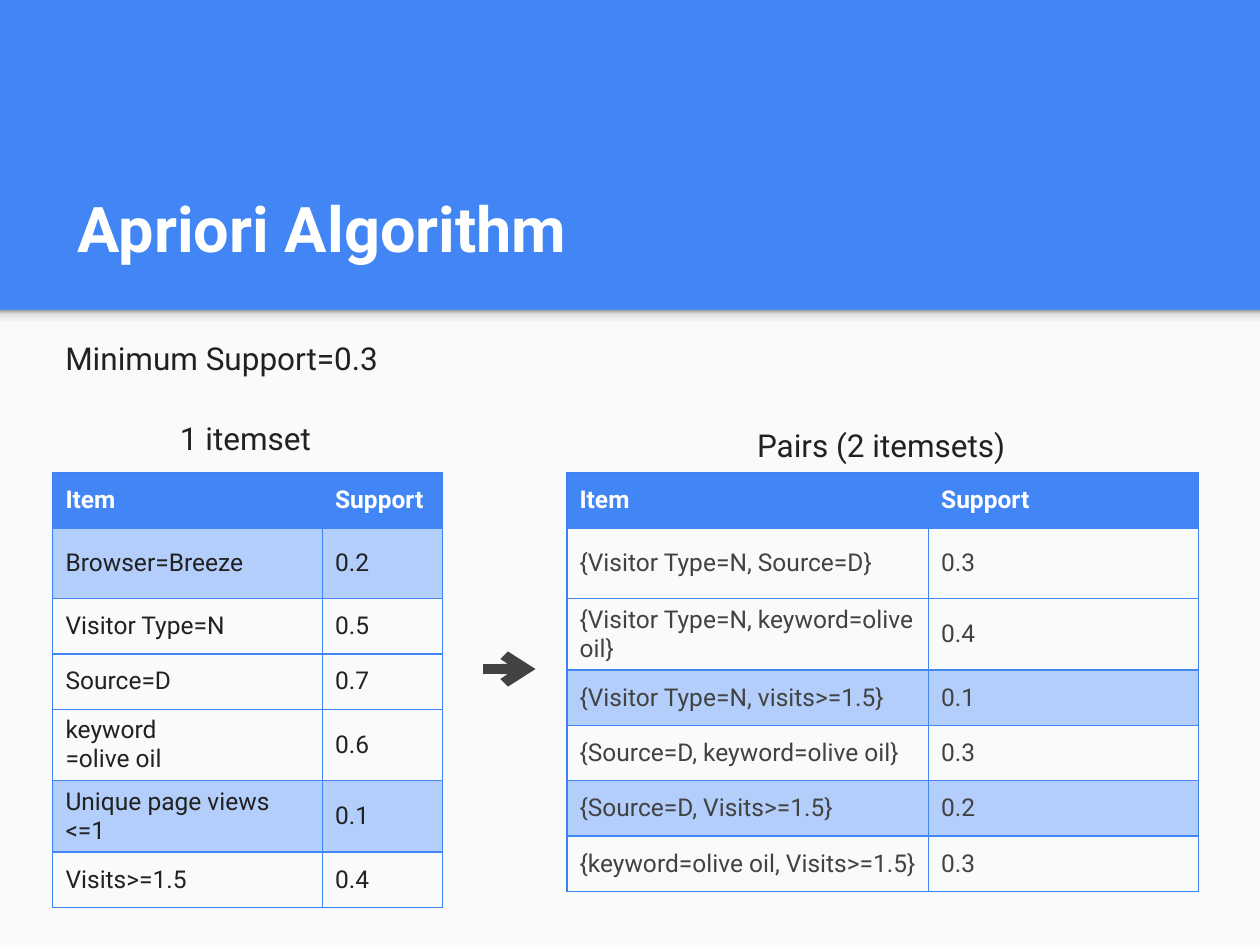
"""Build the Apriori Algorithm slide with its single-item and pair support tables."""
from lxml.etree import SubElement
from pptx import Presentation
from pptx.dml.color import RGBColor
from pptx.enum.shapes import MSO_CONNECTOR, MSO_SHAPE
from pptx.enum.text import MSO_ANCHOR
from pptx.oxml.ns import qn
from pptx.util import Inches, Pt

COLORS = {
    "blue": "4285F4", "edge": "3C81F3", "rare": "B3CEFB", "paper": "FAFAFA",
    "white": "FFFFFF", "ink": "212121", "gray": "424242",
}
SHADE = [(0, "F9F9F9"), (36, "F9F9F9"), (80, "DEDEDE"), (100, "999999")]
MIN_SUPPORT = 0.3
ROW_HEIGHTS = [4.4, 5.6, 4.4, 4.4, 4.4, 4.4, 4.4]

deck = Presentation()
deck.slide_width, deck.slide_height = Inches(10), Inches(7.5)
UNIT = deck.slide_width / 100


def grid(*cells):
    return [round(cell * UNIT) for cell in cells]


def write(frame, text, size, color, bold=False):
    frame.text = text
    look = {"name": "Roboto", "size": Pt(size), "bold": bold}
    for paragraph in frame.paragraphs:
        font = paragraph.runs[0].font
        for key, value in look.items():
            setattr(font, key, value)
        font.color.rgb = RGBColor.from_string(COLORS[color])


slide = deck.slides.add_slide(deck.slide_layouts[6])
slide.background.fill.solid()
slide.background.fill.fore_color.rgb = RGBColor.from_string(COLORS["blue"])

body = slide.shapes.add_shape(MSO_SHAPE.RECTANGLE, *grid(0, 24.6, 100, 50.4))
body.fill.solid()
body.fill.fore_color.rgb = RGBColor.from_string(COLORS["paper"])
band_shadow = slide.shapes.add_shape(MSO_SHAPE.RECTANGLE, *grid(0, 24.6, 100, 1.6))
band_shadow.fill.gradient()
band_shadow.fill.gradient_angle = 90
stops = band_shadow.fill._fill._gradFill.find(qn("a:gsLst"))
for stop in list(stops):
    stops.remove(stop)
for position, shade in SHADE:
    stop = SubElement(stops, qn("a:gs"), pos=str(position * 1000))
    SubElement(stop, qn("a:srgbClr"), val=shade)
for panel in (body, band_shadow):
    panel.line.fill.background()
    panel.shadow.inherit = False

title = slide.shapes.add_textbox(*grid(5.2, 10.8, 89.9, 11.2)).text_frame
title_format = {
    "word_wrap": True, "vertical_anchor": MSO_ANCHOR.BOTTOM,
    "margin_top": Inches(0.1), "margin_bottom": Inches(0.1),
}
for key, value in title_format.items():
    setattr(title, key, value)
write(title, "Apriori Algorithm", 36, "white", True)

itemsets = [
    (4.2, [21.4, 9.5], "ink", [
        ("Browser=Breeze", 0.2), ("Visitor Type=N", 0.5), ("Source=D", 0.7),
        ("keyword\n=olive oil", 0.6), ("Unique page views <=1", 0.1), ("Visits>=1.5", 0.4),
    ]),
    (45, [28.7, 21.4], "gray", [
        ("{Visitor Type=N, Source=D}", 0.3), ("{Visitor Type=N, keyword=olive oil}", 0.4),
        ("{Visitor Type=N, visits>=1.5}", 0.1), ("{Source=D, keyword=olive oil}", 0.3),
        ("{Source=D, Visits>=1.5}", 0.2), ("{keyword=olive oil, Visits>=1.5}", 0.3),
    ]),
]
for left, widths, text_color, supports in itemsets:
    rows = [("Item", "Support"), *supports]
    place = grid(left, 37.5, sum(widths), sum(ROW_HEIGHTS))
    table = slide.shapes.add_table(len(rows), 2, *place).table
    for column, width in zip(table.columns, grid(*widths)):
        column.width = width
    for row, height in zip(table.rows, grid(*ROW_HEIGHTS)):
        row.height = height
    for r, row in enumerate(rows):
        header = r == 0
        for c, value in enumerate(row):
            cell = table.cell(r, c)
            cell.vertical_anchor = MSO_ANCHOR.MIDDLE
            write(cell.text_frame, str(value), 14, "white" if header else text_color, header)
            outer = {"L": c == 0, "R": c == 1, "T": header, "B": r == len(rows) - 1}
            for side, is_outer in outer.items():
                weight, color = (0.75, "edge") if is_outer else (1, "blue")
                border = SubElement(cell._tc.get_or_add_tcPr(), qn(f"a:ln{side}"), w=str(Pt(weight)))
                paint = SubElement(border, qn("a:solidFill"))
                SubElement(paint, qn("a:srgbClr"), val=COLORS[color])
            if header or row[1] < MIN_SUPPORT:
                cell.fill.solid()
                cell.fill.fore_color.rgb = RGBColor.from_string(COLORS["blue" if header else "rare"])
            else:
                cell.fill.background()

next_step = slide.shapes.add_connector(MSO_CONNECTOR.STRAIGHT, *grid(38.3, 53.1, 42.5, 53.1))
next_step.line.width = Pt(5.75)
next_step.line.color.rgb = RGBColor.from_string(COLORS["gray"])
SubElement(next_step.line._get_or_add_ln(), qn("a:tailEnd"), type="arrow")
SubElement(next_step._element.spPr, qn("a:effectLst"))

captions = [
    ("Minimum Support=0.3", 4.2, 26.4, 28.7, True),
    ("1 itemset", 13.3, 32.8, 12.5, True),
    ("Pairs (2 itemsets)", 59.1, 33.3, 21.9, False),
]
for text, left, top, width, wraps in captions:
    caption = slide.shapes.add_textbox(*grid(left, top, width, 4)).text_frame
    caption.word_wrap = wraps
    write(caption, text, 18, "ink")

deck.save("out.pptx")
